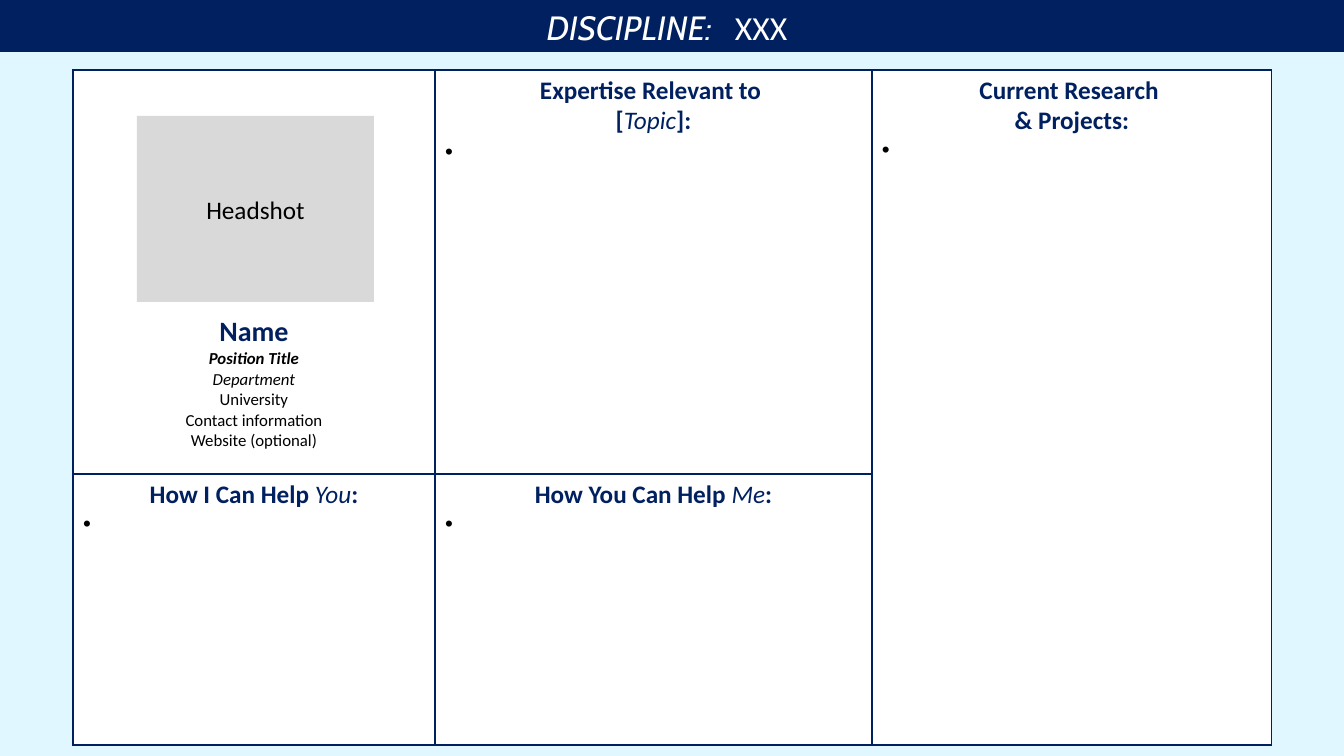
from lxml import etree
from pptx import Presentation
from pptx.dml.color import RGBColor
from pptx.enum.shapes import MSO_SHAPE
from pptx.enum.text import MSO_ANCHOR, PP_ALIGN
from pptx.oxml.ns import qn
from pptx.util import Emu, Pt

RECT = MSO_SHAPE.RECTANGLE
CENTER, LEFT = PP_ALIGN.CENTER, PP_ALIGN.LEFT
MIDDLE, BOTTOM = MSO_ANCHOR.MIDDLE, MSO_ANCHOR.BOTTOM
NAVY, WHITE, BLACK, GREY, SKY = "002060", "FFFFFF", "000000", "D9D9D9", "E0F7FF"
BODY, DISPLAY = "Calibri", "Cabin"

# Content: (text, size, style), where style holds b for bold, i for italic
PROFILE = [
    ("Name", 20, "b", NAVY),
    ("Position Title", 12, "bi", BLACK),
    ("Department", 12, "i", BLACK),
    ("University", 12, "", BLACK),
    ("Contact information", 12, "", BLACK),
    ("Website (optional)", 12, "", BLACK),
]
# (row, column): heading lines made of (text, style), gap in points before the bullet
SECTIONS = {
    (0, 1): ([[("Expertise Relevant to ", "b")],
              [("[", "b"), ("Topic", "i"), ("]:", "b")]], 1),
    (0, 2): ([[("Current Research ", "b")], [("& Projects:", "b")]], 0),
    (1, 0): ([[("How I Can Help ", "b"), ("You", "i"), (":", "b")]], 0),
    (1, 1): ([[("How You Can Help ", "b"), ("Me", "i"), (":", "b")]], 0),
}
COLS, ROWS = [362, 437, 400], [404, 271]
TABLE_LEFT, TABLE_TOP = 73, 70


def px(n):
    return Emu(round(n * 914400 / 100.8))


def rgb(color):
    return RGBColor.from_string(color)


def add_run(p, text, size, color, style="", font=BODY):
    r = p.add_run()
    r.text = text
    f = r.font
    f.name, f.size, f.color.rgb = font, Pt(size), rgb(color)
    f.bold, f.italic = "b" in style, "i" in style
    return r


def add_paragraph(tf, first, align=CENTER):
    p = tf.paragraphs[0] if first else tf.add_paragraph()
    p.alignment = align
    return p


def add_bullet(p):
    pPr = p._p.get_or_add_pPr()
    pPr.set("marL", str(px(31)))
    pPr.set("indent", str(-px(31)))
    etree.SubElement(pPr, qn("a:buFont")).set("typeface", "Arial")
    etree.SubElement(pPr, qn("a:buChar")).set("char", "•")


def style_cell(cell):
    tcPr = cell._tc.get_or_add_tcPr()
    for side in ("lnL", "lnR", "lnT", "lnB"):
        ln = etree.SubElement(tcPr, qn("a:" + side), w=str(Pt(1)))
        fill = etree.SubElement(ln, qn("a:solidFill"))
        etree.SubElement(fill, qn("a:srgbClr"), val=NAVY)
    cell.fill.solid()
    cell.fill.fore_color.rgb = rgb(WHITE)


def add_rect(s, x, y, w, h, color):
    sp = s.shapes.add_shape(RECT, px(x), px(y), px(w), px(h))
    sp.shadow.inherit = False
    sp.fill.solid()
    sp.fill.fore_color.rgb = rgb(color)
    sp.line.fill.background()
    return sp


prs = Presentation()
prs.slide_width, prs.slide_height = px(1344), px(756)
s = prs.slides.add_slide(prs.slide_layouts[6])
s.background.fill.solid()
s.background.fill.fore_color.rgb = rgb(SKY)

# Table grid
table = s.shapes.add_table(len(ROWS), len(COLS), px(TABLE_LEFT), px(TABLE_TOP),
                           px(sum(COLS)), px(sum(ROWS))).table
table.first_row = table.horz_banding = False
for column, width in zip(table.columns, COLS):
    column.width = px(width)
for row, height in zip(table.rows, ROWS):
    row.height = px(height)
for cell in table.iter_cells():
    style_cell(cell)
table.cell(0, 2).merge(table.cell(1, 2))

# Profile cell
profile = table.cell(0, 0)
profile.vertical_anchor = BOTTOM
profile.margin_bottom = px(23)
for i, (text, size, style, color) in enumerate(PROFILE):
    add_run(add_paragraph(profile.text_frame, i == 0), text, size, color, style)

# Headed cells with an empty bullet to fill in
for (row, col), (heading, gap) in SECTIONS.items():
    tf = table.cell(row, col).text_frame
    for i, line in enumerate(heading):
        p = add_paragraph(tf, i == 0)
        for text, style in line:
            add_run(p, text, 18, NAVY, style)
    p = add_paragraph(tf, False, LEFT)
    p.space_before = Pt(gap)
    add_bullet(p)
    add_run(p, " ", 16, BLACK)

# Title bar
add_rect(s, 0, 0, 1344, 52, NAVY)
tf = s.shapes.add_textbox(px(437), px(2), px(460), px(50)).text_frame
tf.word_wrap = True
p = add_paragraph(tf, True)
add_run(p, "DISCIPLINE:", 24, WHITE, "i", DISPLAY)
gap_run = add_run(p, " ", 24, WHITE, "i", DISPLAY)
gap_run.font._element.set("spc", "1100")
add_run(p, "XXX", 24, WHITE)

# Headshot frame
tf = add_rect(s, 137, 116, 237, 186, GREY).text_frame
tf.vertical_anchor = MIDDLE
add_run(add_paragraph(tf, True), "Headshot", 18, BLACK)

prs.save("out.pptx")
